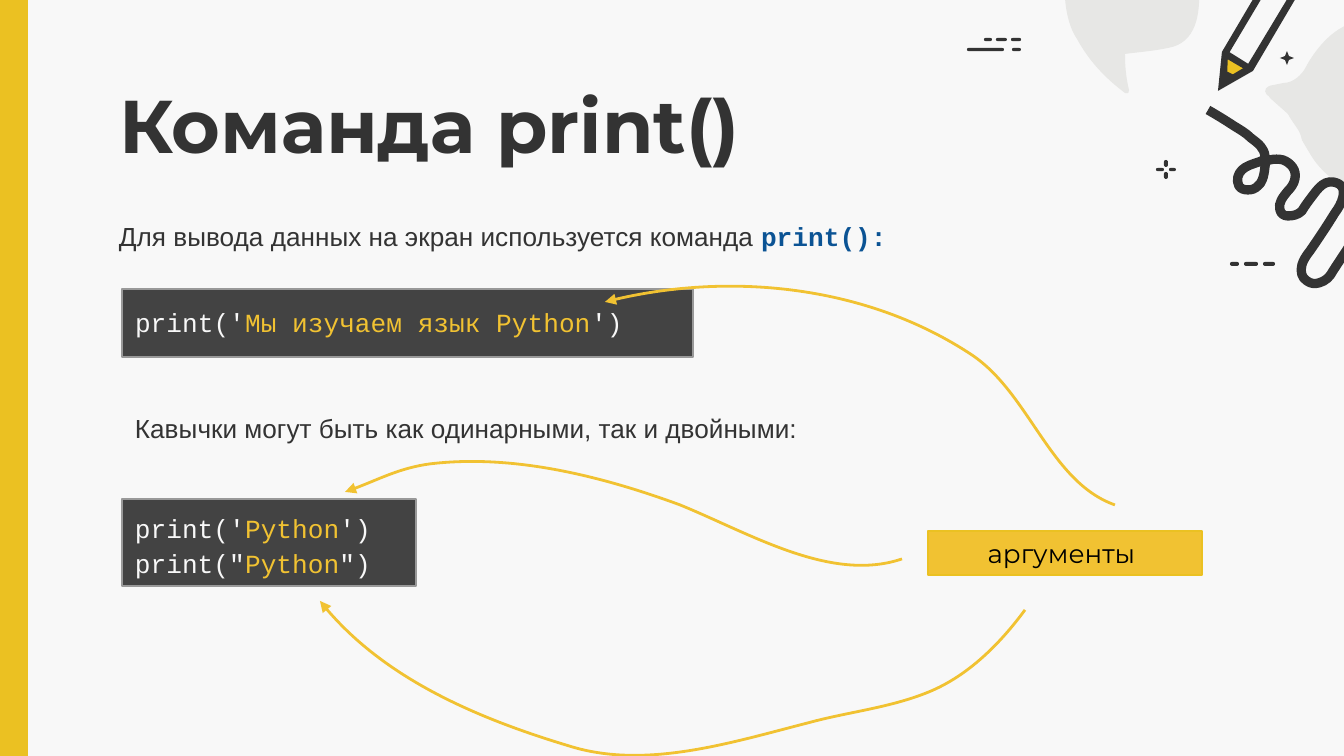
from lxml.etree import SubElement
from pptx import Presentation
from pptx.dml.color import RGBColor
from pptx.enum.shapes import MSO_SHAPE
from pptx.enum.text import MSO_ANCHOR, MSO_AUTO_SIZE, PP_ALIGN
from pptx.oxml.ns import qn
from pptx.util import Emu, Pt

PX = 914400 / 134.4
PAPER, INK, BLOB = "F8F8F8", "333333", "E7E7E5"
YELLOW, GOLD, CODE_BACK = "EBC122", "F1C232", "434343"

SPEECH_BUBBLE = [
    (1113, -77), (1102, -76), (1090, -75), (1081, -66), (1061, -48), (1059, 13), (1077, 39),
    (1089, 61), (1105, 78), (1125, 93), (1126, 94), (1129, 94), (1129, 90),
    (1126, 78), (1125, 66), (1125, 54), (1140, 52), (1154, 51), (1168, 48),
    (1197, 43), (1200, 13), (1199, -11), (1199, -24), (1199, -39), (1195, -50),
    (1189, -60), (1184, -69), (1168, -71), (1150, -75), (1132, -77), (1113, -77)]
ROUND_BUBBLE = [
    (1466, 60), (1492, 103), (1477, 160), (1433, 184), (1390, 210), (1333, 195), (1309, 152),
    (1303, 142), (1302, 140), (1302, 140), (1301, 136), (1300, 132), (1297, 128),
    (1293, 122), (1290, 118), (1288, 114), (1288, 114), (1270, 98), (1270, 98),
    (1269, 97), (1269, 95), (1267, 95), (1263, 90), (1266, 86), (1274, 85),
    (1274, 85), (1284, 83), (1284, 83), (1293, 83), (1302, 75), (1306, 67),
    (1306, 67), (1320, 39), (1343, 27), (1384, 1), (1441, 16), (1466, 60)]
SCRIBBLE = [
    (1208, 110), (1215, 114), (1225, 120), (1234, 126), (1239, 129), (1246, 133), (1251, 138),
    (1259, 144), (1264, 148), (1265, 156), (1266, 158), (1266, 163), (1265, 167),
    (1264, 177), (1262, 183), (1258, 186), (1255, 189), (1252, 190), (1248, 190),
    (1244, 190), (1241, 189), (1239, 186), (1236, 180), (1238, 174), (1242, 170),
    (1246, 166), (1253, 164), (1259, 162), (1263, 160), (1266, 160), (1270, 160),
    (1274, 159), (1279, 159), (1283, 160), (1291, 163), (1297, 170), (1295, 179),
    (1294, 184), (1291, 188), (1288, 191), (1283, 197), (1278, 203), (1280, 210),
    (1281, 214), (1284, 216), (1288, 216), (1293, 216), (1298, 215), (1302, 211),
    (1305, 206), (1308, 202), (1311, 198), (1318, 189), (1325, 177), (1339, 184),
    (1348, 189), (1342, 204), (1335, 213), (1327, 226), (1319, 238), (1310, 251),
    (1306, 256), (1303, 261), (1302, 265), (1300, 272), (1302, 278), (1307, 281),
    (1311, 284), (1315, 284), (1319, 283), (1326, 281), (1330, 277), (1333, 271),
    (1352, 242), (1372, 212), (1391, 183)]
PENCIL = [
    (YELLOW, [[(1250, 67), (1226, 52), (1222, 73), (1231, 79)]]),
    (PAPER, [[(1304, -24), (1279, -38), (1226, 52), (1250, 67)]]),
    (INK, [[(1224, 70), (1220, 77), (1230, 82), (1234, 75)]]),
    (INK, [[(1250, 65), (1226, 50), (1222, 56), (1246, 70)]]),
    (INK, [[(1300, -22), (1247, 66), (1227, 78), (1228, 55), (1281, -34)],
           [(1309, -24), (1278, -43), (1222, 52), (1218, 91), (1253, 71)]])]
DASHES = [
    (1164, 172, 4, 7), (1156, 168, 8, 3), (1164, 160, 4, 7), (1169, 168, 7, 3),
    (967, 48, 37, 3), (1012, 48, 9, 3),
    (984, 38, 8, 3), (996, 38, 11, 3), (1011, 38, 10, 3),
    (1230, 262, 9, 4), (1244, 262, 14, 4), (1263, 262, 12, 4)]
ARGUMENT_ARROWS = [
    [(605, 302), (725, 271), (868, 286), (972, 355), (1030, 394), (1050, 482), (1115, 505)],
    [(320, 601), (379, 676), (476, 718), (569, 746), (645, 770), (730, 743), (808, 723),
     (848, 712), (890, 708), (929, 692), (968, 676), (1000, 644), (1025, 610)],
    [(345, 492), (374, 482), (400, 468), (430, 464), (513, 454), (601, 476), (680, 505),
     (751, 534), (831, 583), (902, 559)]]


def px(length):
    """Turn pixels into EMU."""
    return Emu(round(length * PX))


def color(value):
    """Turn a hex string into a colour."""
    return RGBColor.from_string(value)


def paint(shape, fill=None, line=None, width=0.75):
    """Set the fill and line of a shape, and drop its shadow."""
    shape.shadow.inherit = False
    if fill:
        shape.fill.solid()
        shape.fill.fore_color.rgb = color(fill)
    else:
        shape.fill.background()
    if line:
        shape.line.color.rgb = color(line)
        shape.line.width = Pt(width)
    else:
        shape.line.fill.background()


def add_block(slide, box, fill, line=None, kind=MSO_SHAPE.RECTANGLE):
    """Add a preset shape."""
    block = slide.shapes.add_shape(kind, *map(px, box))
    paint(block, fill, line)
    return block


def add_polygon(slide, contours, fill):
    """Add a filled outline of straight sides, with holes if any."""
    builder = slide.shapes.build_freeform(*contours[0][0], scale=PX)
    builder.add_line_segments(contours[0][1:])
    for hole in contours[1:]:
        builder.move_to(*hole[0])
        builder.add_line_segments(hole[1:])
    paint(builder.convert_to_shape(), fill)


def add_curve(slide, points, arrow=False, **style):
    """Add a chain of cubic curves: a start, then three points for each."""
    builder = slide.shapes.build_freeform(*points[0], scale=PX)
    builder.add_line_segments(points[1:], close="fill" in style)
    curve = builder.convert_to_shape()
    sides = list(curve.element.iter(qn("a:lnTo")))
    for start in range(0, len(points) - 1, 3):
        trio = sides[start:start + 3]
        bezier = SubElement(trio[0].getparent(), qn("a:cubicBezTo"))
        trio[0].addprevious(bezier)
        for side in trio:
            bezier.append(side[0])
            side.getparent().remove(side)
    paint(curve, **style)
    if arrow:
        SubElement(curve.line._get_or_add_ln(), qn("a:headEnd"), type="triangle")


def write_text(shape, paragraphs, font="Arial", size=14, bold=False, align=PP_ALIGN.LEFT,
               anchor=MSO_ANCHOR.TOP, spacing=1.0, gap=0):
    """Write paragraphs of (text, colour, optional bold font) runs."""
    frame = shape.text_frame
    frame.word_wrap = True
    frame.auto_size = MSO_AUTO_SIZE.NONE
    frame.vertical_anchor = anchor
    frame.margin_left = frame.margin_right = frame.margin_top = frame.margin_bottom = px(13)
    for index, runs in enumerate(paragraphs):
        paragraph = frame.add_paragraph() if index else frame.paragraphs[0]
        paragraph.alignment = align
        paragraph.line_spacing = spacing
        paragraph.space_before = Pt(gap if index else 0)
        for text, ink, *bold_font in runs:
            run = paragraph.add_run()
            run.text = text
            run.font.name = bold_font[0] if bold_font else font
            run.font.size = Pt(size)
            run.font.bold = bold or bool(bold_font)
            run.font.color.rgb = color(ink)


def add_note(slide, box, runs):
    """Add a line of explanation."""
    write_text(slide.shapes.add_textbox(*map(px, box)), [runs], spacing=1.25)


def add_code(slide, box, lines, **style):
    """Add a dark code block of (before, argument, after) lines."""
    paragraphs = [list(zip(line, (PAPER, GOLD, PAPER))) for line in lines]
    block = add_block(slide, box, CODE_BACK, "999999")
    write_text(block, paragraphs, font="Courier New", **style)


def add_decoration(slide):
    """Draw the side bar and the corner ornament."""
    add_block(slide, (-1, 0, 28, 756), YELLOW, YELLOW)
    for bubble in (ROUND_BUBBLE, SPEECH_BUBBLE):
        add_curve(slide, bubble, fill=BLOB)
    for fill, contours in PENCIL:
        add_polygon(slide, contours, fill)
    add_curve(slide, SCRIBBLE, line=INK, width=5)
    for dash in DASHES:
        add_block(slide, dash, INK, kind=MSO_SHAPE.ROUNDED_RECTANGLE).adjustments[0] = 0.5
    add_block(slide, (1280, 51, 14, 14), INK, kind=MSO_SHAPE.STAR_4_POINT).adjustments[0] = 0.2


def main():
    """Build the slide and save it."""
    deck = Presentation()
    deck.slide_width, deck.slide_height = px(1344), px(756)
    slide = deck.slides.add_slide(deck.slide_layouts[5])
    slide.background.fill.solid()
    slide.background.fill.fore_color.rgb = color(PAPER)
    add_decoration(slide)

    title = slide.shapes.title
    title.left, title.top, title.width, title.height = map(px, (106, 66, 1133, 85))
    write_text(title, [[("Команда print()", INK)]], font="Montserrat", size=40, bold=True)

    add_note(slide, (106, 200, 1097, 181),
             [("Для вывода данных на экран используется команда ", INK),
              ("print():", "0B5394", "Courier New")])
    add_code(slide, (122, 289, 571, 68), [("print('", "Мы изучаем язык Python", "')")],
             spacing=1.15)
    add_code(slide, (122, 499, 294, 87),
             [("print('", "Python", "')"), ('print("', "Python", '")')], gap=2)
    add_note(slide, (122, 392, 895, 95),
             [("Кавычки могут быть как одинарными, так и двойными:", INK)])

    for arrow in ARGUMENT_ARROWS:
        add_curve(slide, arrow, arrow=True, line=GOLD, width=1.5)
    label = add_block(slide, (928, 531, 274, 44), GOLD, YELLOW)
    write_text(label, [[("аргументы ", "000000")]], font="Montserrat",
               align=PP_ALIGN.CENTER, anchor=MSO_ANCHOR.MIDDLE)
    deck.save("out.pptx")


if __name__ == "__main__":
    main()
